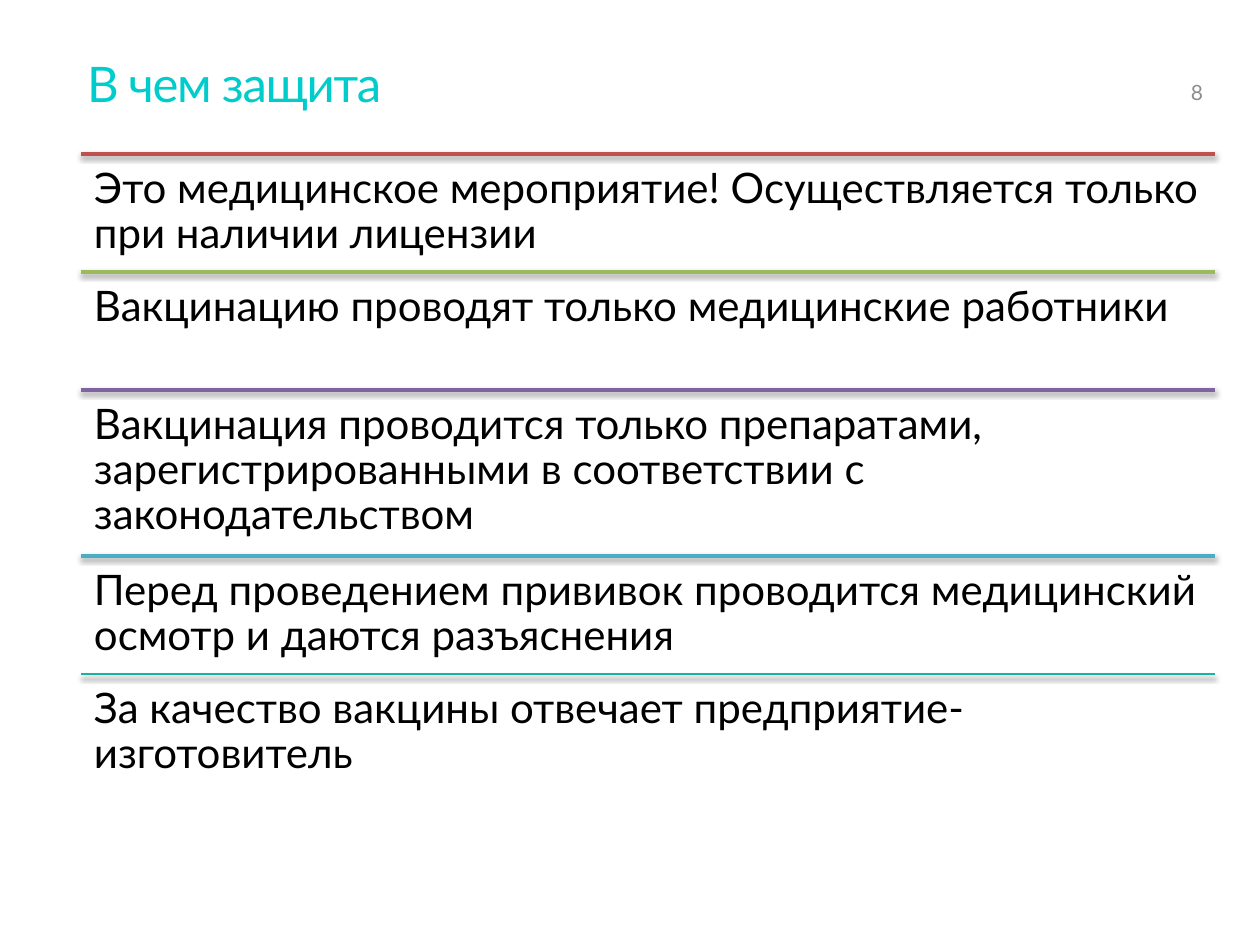
from lxml import etree
from pptx import Presentation
from pptx.dml.color import RGBColor
from pptx.enum.shapes import MSO_CONNECTOR
from pptx.enum.text import MSO_ANCHOR, MSO_AUTO_SIZE, PP_ALIGN
from pptx.oxml.ns import qn
from pptx.util import Emu, Pt

STRAIGHT = MSO_CONNECTOR.STRAIGHT
TOP, BOTTOM = MSO_ANCHOR.TOP, MSO_ANCHOR.BOTTOM
LEFT = PP_ALIGN.LEFT
NO_FIT = MSO_AUTO_SIZE.NONE
TITLE_ONLY = 5
PX = 914400 / 126


class Theme:
    font = "Lato"
    title, number, body, shadow = "00CCCC", "8C8C90", "000000", "000000"
    title_size, number_size, body_size = 28, 12, 24


def px(length):
    return Emu(round(length * PX))


def write(box, text, *, size, color, inset_x=0, inset_y=0, anchor=TOP,
          line_spacing=None, tracking=None):
    frame = box.text_frame
    frame.word_wrap = True
    frame.auto_size = NO_FIT
    frame.vertical_anchor = anchor
    frame.margin_left = frame.margin_right = px(inset_x)
    frame.margin_top = frame.margin_bottom = px(inset_y)
    para = frame.paragraphs[0]
    para.alignment = LEFT
    para.line_spacing = line_spacing
    span = para.add_run()
    span.text = text
    span.font.name = Theme.font
    span.font.size = Pt(size)
    span.font.color.rgb = RGBColor.from_string(color)
    if tracking is not None:
        span.font._element.set("spc", str(round(tracking * 100)))


deck = Presentation()
deck.slide_width, deck.slide_height = px(1260), px(945)
page = deck.slides.add_slide(deck.slide_layouts[TITLE_ONLY])

title = page.shapes.title
title.left, title.top, title.width, title.height = px(87), px(50), px(1086), px(130)
write(title, "В чем защита", size=Theme.title_size, color=Theme.title,
      inset_y=6, line_spacing=Pt(32), tracking=-0.7)

page_number = page.shapes.add_textbox(px(1191), px(50), px(48), px(60))
write(page_number, "8", size=Theme.number_size, color=Theme.number,
      inset_y=5, anchor=BOTTOM)

# Text, row height, rule colour, rule width, shadow (opacity %, blur, distance)
SOFT, STRONG = (38, 3.1, 1.6), (50, 3, 2)
rows = [
    ("Это медицинское мероприятие! Осуществляется только при наличии лицензии",
     118, "C0504D", 2, SOFT),
    ("Вакцинацию проводят только медицинские работники",
     118, "9BBB59", 2, SOFT),
    ("Вакцинация проводится только препаратами, зарегистрированными "
     "в соответствии с законодательством",
     166, "8064A2", 2, SOFT),
    ("Перед проведением прививок проводится медицинский осмотр и даются разъяснения",
     118, "4BACC6", 2, SOFT),
    ("За качество вакцины отвечает предприятие-изготовитель",
     118, "1AB39F", 1, STRONG),
]
row_left, row_width, row_top = 81, 1134, 154

for text, row_height, rule_color, rule_width, (opacity, blur, distance) in rows:
    rule = page.shapes.add_connector(
        STRAIGHT, px(row_left), px(row_top), px(row_left + row_width), px(row_top))
    rule.line.color.rgb = RGBColor.from_string(rule_color)
    rule.line.width = Pt(rule_width)
    effects = etree.SubElement(rule._element.spPr, qn("a:effectLst"))
    shadow = etree.SubElement(
        effects, qn("a:outerShdw"), blurRad=str(Pt(blur)), dist=str(Pt(distance)),
        dir="5400000", rotWithShape="0")
    shade = etree.SubElement(shadow, qn("a:srgbClr"), val=Theme.shadow)
    etree.SubElement(shade, qn("a:alpha"), val=str(opacity * 1000))

    box = page.shapes.add_textbox(
        px(row_left), px(row_top), px(row_width), px(row_height))
    write(box, text, size=Theme.body_size, color=Theme.body,
          inset_x=13, inset_y=13, line_spacing=0.9)
    row_top += row_height

deck.save("out.pptx")
